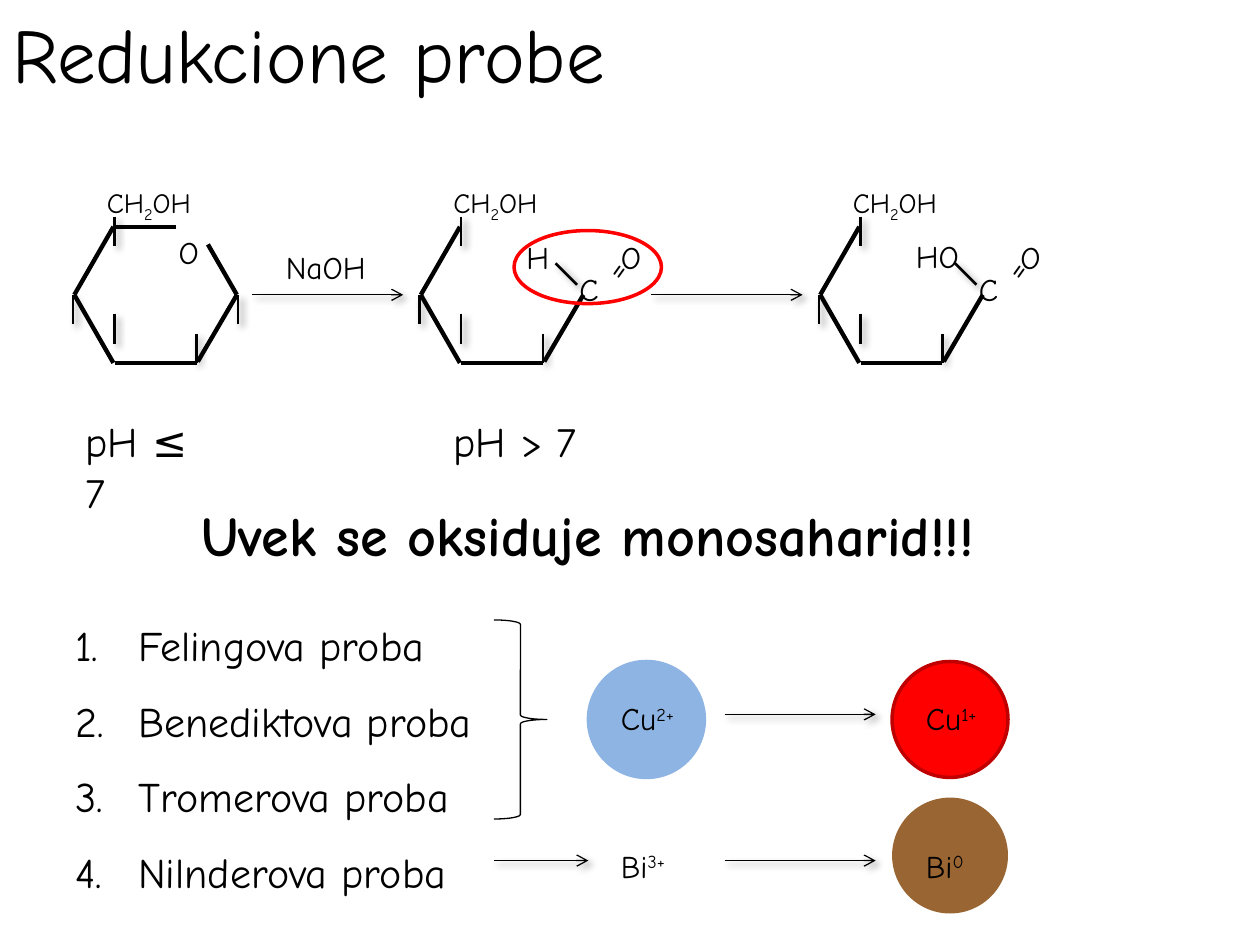
"""Build the slide on reduction tests for monosaccharides."""
import pptx
import pptx.dml.color
import pptx.enum.shapes
import pptx.enum.text
import pptx.oxml
import pptx.oxml.ns
import pptx.util
from pptx.util import Inches

BLACK = pptx.dml.color.RGBColor(0x00, 0x00, 0x00)
RED = pptx.dml.color.RGBColor(0xFF, 0x00, 0x00)
DARK_RED = pptx.dml.color.RGBColor(0xC0, 0x00, 0x00)
BLUE = pptx.dml.color.RGBColor(0x8E, 0xB4, 0xE3)
BROWN = pptx.dml.color.RGBColor(0x99, 0x66, 0x33)
FONT = "Comic Neue"
NAMESPACE = pptx.oxml.ns.nsdecls("a")
OVAL = pptx.enum.shapes.MSO_SHAPE.OVAL
BRACE = pptx.enum.shapes.MSO_SHAPE.RIGHT_BRACE

TITLE = "Redukcione probe"
CONCLUSION = "Uvek se oksiduje monosaharid!!!"
TESTS = ["Felingova proba", "Benediktova proba", "Tromerova proba", "Nilnderova proba"]
CH2OH = [("CH", 0), ("2", -25), ("OH", 0)]

SKELETON = [(0.9, 2.88, 0.59, 2.34), (0.9, 1.8, 0.59, 2.34),
            (1.56, 2.88, 0.91, 2.88), (1.88, 2.34, 1.57, 2.87)]
SUBSTITUENTS = [(1.56, 2.65, 1.56, 2.88), (0.91, 2.49, 0.91, 2.73),
                (0.58, 2.34, 0.58, 2.57), (0.91, 1.72, 0.91, 1.95)]
RING_CLOSURE = [(1.4, 1.8, 0.91, 1.8), (1.88, 2.34, 1.65, 1.94)]
RING_SUBSTITUENT = [(1.89, 2.34, 1.89, 2.57)]
CARBONYL_BOND = [(1.66, 2.09, 1.83, 2.26)]
CARBONYL = [(" =", 1.9, 1.94, 0.47, 305.5), ("C", 1.75, 2.09, 0.35, 0),
            ("O", 2.08, 1.84, 0.4, 0)]
MOLECULES = [
    (0, SKELETON + RING_CLOSURE, SUBSTITUENTS + RING_SUBSTITUENT,
     [("O", 1.32, 1.8, 0.4, 0)]),
    (2.75, SKELETON, SUBSTITUENTS + CARBONYL_BOND,
     [("H", 1.33, 1.84, 0.4, 0)] + CARBONYL),
    (5.92, SKELETON, SUBSTITUENTS + CARBONYL_BOND,
     [("HO", 1.25, 1.83, 0.6, 0)] + CARBONYL),
]
IONS = [("Cu", "2+", 4.83, 5.5, 0.67), ("Cu", "1+", 7.25, 5.5, 0.64),
        ("Bi", "3+", 4.83, 6.67, 0.62), ("Bi", "0", 7.25, 6.67, 0.53)]
ARROWS = [(2, 2.34, 1.2), (5.17, 2.34, 1.2), (5.75, 5.67, 1.2),
          (3.92, 6.83, 0.75), (5.75, 6.83, 1.2)]
SPOTS = [(7.08, 6.33, BROWN, None), (7.08, 5.25, RED, DARK_RED), (4.67, 5.25, BLUE, BLUE)]


def add_text(shapes, paragraphs, left, top, width, height, size=18, bold=False,
             wrap=False, rotation=0, numbered=False, spacing=None):
    box = shapes.add_textbox(Inches(left), Inches(top), Inches(width), Inches(height))
    box.rotation = rotation
    frame = box.text_frame
    frame.word_wrap = wrap
    frame.auto_size = pptx.enum.text.MSO_AUTO_SIZE.SHAPE_TO_FIT_TEXT
    for index, content in enumerate(paragraphs):
        paragraph = frame.add_paragraph() if index else frame.paragraphs[0]
        if spacing:
            paragraph.line_spacing = spacing
        if numbered:
            properties = paragraph._p.get_or_add_pPr()
            properties.set("marL", str(Inches(0.5)))
            properties.set("indent", str(Inches(-0.5)))
            properties.append(pptx.oxml.parse_xml(
                f'<a:buFont {NAMESPACE} typeface="+mj-lt"/>'))
            properties.append(pptx.oxml.parse_xml(
                f'<a:buAutoNum {NAMESPACE} type="arabicPeriod"/>'))
        for words, baseline in [(content, 0)] if isinstance(content, str) else content:
            run = paragraph.add_run()
            run.text = words
            run.font.name = FONT
            run.font.size = pptx.util.Pt(size)
            run.font.bold = bold
            run.font.color.rgb = BLACK
            if baseline:
                run._r.get_or_add_rPr().set("baseline", str(baseline * 1000))


def add_line(shapes, ends, weight, shadow=True, arrow=False):
    line = shapes.add_connector(pptx.enum.shapes.MSO_CONNECTOR.STRAIGHT,
                                *[Inches(value) for value in ends])
    line.line.color.rgb = BLACK
    line.line.width = pptx.util.Pt(weight)
    if arrow:
        line.line._get_or_add_ln().append(
            pptx.oxml.parse_xml(f'<a:tailEnd {NAMESPACE} type="arrow"/>'))
    effect = ('<a:outerShdw blurRad="50800" dist="38100" dir="2700000" algn="tl" '
              'rotWithShape="0"><a:srgbClr val="000000"><a:alpha val="40000"/>'
              '</a:srgbClr></a:outerShdw>') if shadow else ""
    line._element.spPr.append(
        pptx.oxml.parse_xml(f"<a:effectLst {NAMESPACE}>{effect}</a:effectLst>"))


def add_outline(shapes, kind, left, top, width, height, fill=None, line=None, weight=2):
    shape = shapes.add_shape(kind, Inches(left), Inches(top), Inches(width), Inches(height))
    shape.shadow.inherit = False
    if fill is None:
        shape.fill.background()
    else:
        shape.fill.solid()
        shape.fill.fore_color.rgb = fill
    if line is None:
        shape.line.fill.background()
    else:
        shape.line.color.rgb = line
        shape.line.width = pptx.util.Pt(weight)


def add_molecule(shapes, offset, bonds, thin_bonds, atoms):
    parts = shapes.add_group_shape().shapes
    for group, weight, shadow in [(bonds, 2.5, False), (thin_bonds, 1.5, True)]:
        for x1, y1, x2, y2 in group:
            add_line(parts, (x1 + offset, y1, x2 + offset, y2), weight, shadow)
    add_text(parts, [CH2OH], 0.75 + offset, 1.42, 0.93, 0.34, size=16)
    for atom, left, top, width, rotation in atoms:
        add_text(parts, [atom], left + offset, top, width, 0.4,
                 wrap=bool(rotation), rotation=rotation)


def main():
    deck = pptx.Presentation()
    deck.slide_width, deck.slide_height = Inches(10), Inches(7.5)
    shapes = deck.slides.add_slide(deck.slide_layouts[6]).shapes

    for left, top, fill, line in SPOTS:
        add_outline(shapes, OVAL, left, top, 0.92, 0.92, fill, line)
    add_text(shapes, [TITLE], 0, 0, 5.92, 0.84, size=44, wrap=True)
    for molecule in MOLECULES:
        add_molecule(shapes, *molecule)
    add_outline(shapes, OVAL, 4.08, 1.83, 1.17, 0.58, line=RED)
    add_text(shapes, ["pH ≤ 7"], 0.58, 3.25, 1.27, 0.51, size=24, wrap=True)
    add_text(shapes, ["pH > 7"], 3.5, 3.25, 1.27, 0.51, size=24)
    add_text(shapes, ["NaOH"], 2.17, 1.92, 0.93, 0.4)
    add_text(shapes, [CONCLUSION], 1.5, 3.92, 7.2, 0.64, size=32, bold=True)
    add_text(shapes, TESTS, 0.5, 4.67, 3.6, 2.46, size=24, numbered=True, spacing=1.5)
    add_outline(shapes, BRACE, 3.92, 4.92, 0.42, 1.58, line=BLACK, weight=0.75)
    for element, charge, left, top, width in IONS:
        add_text(shapes, [[(element, 0), (charge, 30)]], left, top, width, 0.4)
    for left, top, length in ARROWS:
        add_line(shapes, (left, top, left + length, top), 0.75, arrow=True)

    deck.save("out.pptx")


if __name__ == "__main__":
    main()
